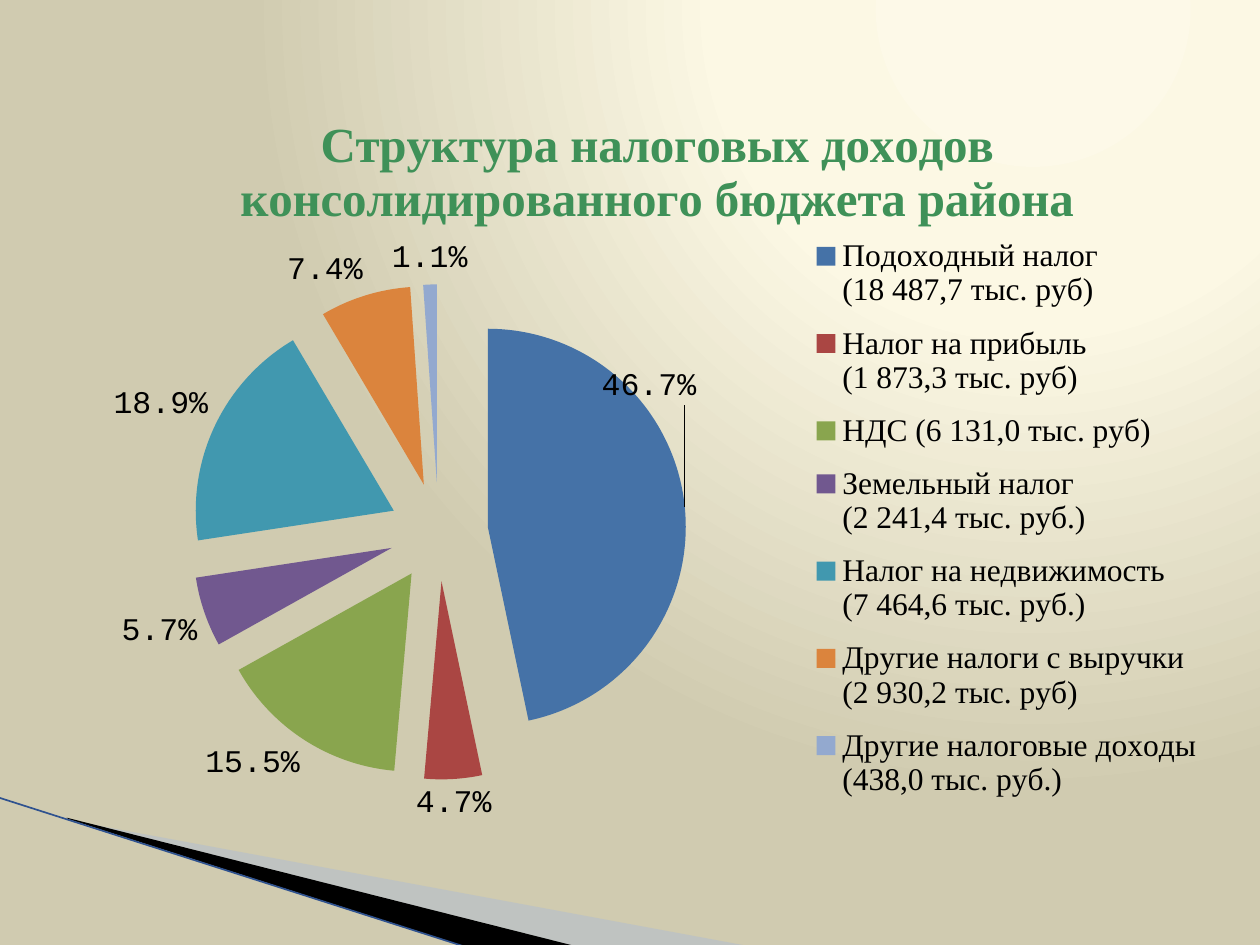
from lxml import etree
from pptx import Presentation
from pptx.chart.data import CategoryChartData
from pptx.dml.color import RGBColor
from pptx.enum.chart import XL_CHART_TYPE as ChartType, XL_LABEL_POSITION as LabelPos
from pptx.enum.chart import XL_LEGEND_POSITION as LegendPos
from pptx.enum.shapes import MSO_CONNECTOR as Connector
from pptx.oxml import parse_xml
from pptx.oxml.ns import nsdecls, qn
from pptx.util import Inches, Pt

# Content: tax, amount, share, slice colour
TITLE = "Структура налоговых доходов консолидированного бюджета района"
TAXES = [
    ("Подоходный налог\n(18 487,7 тыс. руб)", 0.467, "4572A7"),
    ("Налог на прибыль\n(1 873,3 тыс. руб)", 0.047, "AA4643"),
    ("НДС (6 131,0 тыс. руб)", 0.155, "89A54E"),
    ("Земельный налог\n(2 241,4 тыс. руб.)", 0.057, "71588F"),
    ("Налог на недвижимость\n(7 464,6 тыс. руб.)", 0.189, "4198AF"),
    ("Другие налоги с выручки\n(2 930,2 тыс. руб)", 0.074, "DB843D"),
    ("Другие налоговые доходы\n(438,0 тыс. руб.)", 0.011, "93A9CF"),
]
THEME = {
    "serif": "Times New Roman", "mono": "Courier New",
    "title": "3F9158", "text": "000000", "title_size": 28, "text_size": 18,
    "line": "2F528F",
    "background": [(0, "FDF9E8"), (40, "FCF8E4"), (100, "D0CBB0")],
}
# Corner ribbons: points in inches, colour, opacity in percent
RIBBONS = [
    ([(0.55, 6.51), (5.95, 7.51), (4.56, 7.51), (0.55, 6.5)], "A7B9DB", 40),
    ([(0.53, 6.49), (4.57, 7.51), (3.72, 7.52), (0.54, 6.5)], "000000", 100),
]
# Shares of the chart's size: x, y, width, height
PLOT_AREA = (0.094, 0.283, 0.438, 0.64)
LEGEND_AREA = (0.64, 0.2, 0.35, 0.77)
TITLE_PLACE = (0.13, 0.05)
LABEL_SHIFT = (-0.08, -0.13)


def rgb(code):
    return RGBColor.from_string(code)


def set_font(font, name, size, color, bold=False):
    font.name, font.size, font.bold = name, Pt(size), bold
    font.color.rgb = rgb(color)


def layout(*shares, fixed=True, inner=False):
    parts = '<c:layoutTarget val="inner"/>' if inner else ""
    if fixed:
        parts += '<c:xMode val="edge"/><c:yMode val="edge"/>'
    parts += "".join(f'<c:{k} val="{v}"/>' for k, v in zip("xywh", shares))
    return parse_xml(f'<c:layout {nsdecls("c")}><c:manualLayout>{parts}'
                     "</c:manualLayout></c:layout>")


def place(parent, after, new):
    for old in parent.findall(qn("c:layout")):
        parent.remove(old)
    if after is None:
        parent.insert(0, new)
    else:
        parent.find(qn(after)).addnext(new)


prs = Presentation()
prs.slide_width, prs.slide_height = Inches(10), Inches(7.5)
s = prs.slides.add_slide(prs.slide_layouts[6])

# Background glow
fill = s.background.fill
fill.gradient()
bg_pr = s.background._cSld.find(qn("p:bg")).find(qn("p:bgPr"))
stops = "".join(f'<a:gs pos="{pos * 1000}"><a:srgbClr val="{c}"/></a:gs>'
                for pos, c in THEME["background"])
bg_pr.replace(bg_pr.find(qn("a:gradFill")), parse_xml(
    f'<a:gradFill {nsdecls("a")} rotWithShape="1"><a:gsLst>{stops}</a:gsLst>'
    '<a:path path="circle"><a:fillToRect l="65000" t="0" r="0" b="98000"/></a:path>'
    "</a:gradFill>"))

# Corner ribbons and edge line
for points, color, opacity in RIBBONS:
    start, *rest = [(Inches(x), Inches(y)) for x, y in points]
    builder = s.shapes.build_freeform(*start)
    builder.add_line_segments(rest, close=True)
    sp = builder.convert_to_shape()
    sp.shadow.inherit = False
    sp.line.fill.background()
    sp.fill.solid()
    sp.fill.fore_color.rgb = rgb(color)
    if opacity < 100:
        clr = sp._element.spPr.find(qn("a:solidFill"))[0]
        etree.SubElement(clr, qn("a:alpha")).set("val", str(opacity * 1000))
edge = s.shapes.add_connector(Connector.STRAIGHT, Inches(-0.01), Inches(6.33),
                              Inches(3.71), Inches(7.52))
edge.line.color.rgb = rgb(THEME["line"])
edge.line.width = Pt(0.95)
etree.SubElement(edge._element.spPr, qn("a:effectLst"))

# Pie chart
data = CategoryChartData(number_format="0.0%")
data.categories = [name for name, _, _ in TAXES]
data.add_series(TITLE, [share for _, share, _ in TAXES])
chart = s.shapes.add_chart(ChartType.PIE, Inches(0.67), Inches(0.52),
                           Inches(8.98), Inches(6.14), data).chart
set_font(chart.font, THEME["mono"], THEME["text_size"], THEME["text"])
plot = chart.plots[0]
plot.vary_by_categories = True
place(chart._chartSpace.chart.plotArea, None, layout(*PLOT_AREA, inner=True))

# Title
chart.has_title = True
tf = chart.chart_title.text_frame
tf.text = TITLE
set_font(tf.paragraphs[0].runs[0].font, THEME["serif"], THEME["title_size"],
         THEME["title"], bold=True)
place(chart.chart_title._element, "c:tx", layout(*TITLE_PLACE))

# Legend
chart.has_legend = True
legend = chart.legend
legend.position = LegendPos.RIGHT
legend.include_in_layout = False
set_font(legend.font, THEME["serif"], THEME["text_size"], THEME["text"])
place(legend._element, "c:legendPos", layout(*LEGEND_AREA))

# Slices
series = plot.series[0]
series._element.find(qn("c:tx")).addnext(
    parse_xml(f'<c:explosion {nsdecls("c")} val="25"/>'))
for i, (_, _, color) in enumerate(TAXES):
    slice_fill = series.points[i].format.fill
    slice_fill.solid()
    slice_fill.fore_color.rgb = rgb(color)

# Labels, the largest one moved over its slice
labels = series.data_labels
labels.show_value = True
labels.number_format, labels.number_format_is_linked = "0.0%", False
labels.position = LabelPos.OUTSIDE_END
set_font(labels.font, THEME["mono"], THEME["text_size"], THEME["text"])
first = series.points[0].data_label
first.position = LabelPos.OUTSIDE_END
set_font(first.font, THEME["mono"], THEME["text_size"], THEME["text"])
place(labels._element.find(qn("c:dLbl")), "c:idx", layout(*LABEL_SHIFT, fixed=False))
for old in labels._element.findall(qn("c:showLeaderLines")):
    labels._element.remove(old)
etree.SubElement(labels._element, qn("c:showLeaderLines")).set("val", "1")

prs.save("out.pptx")
